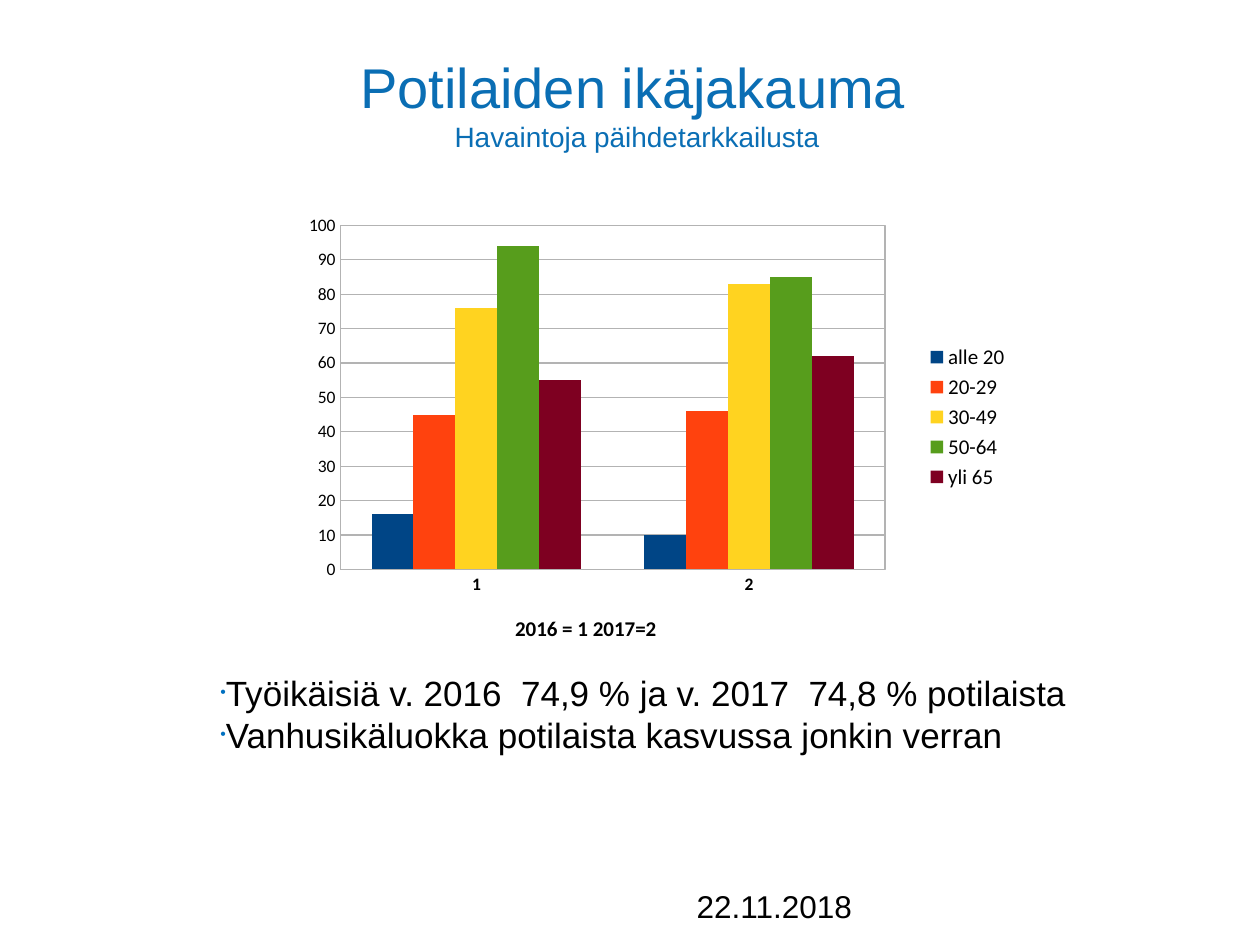
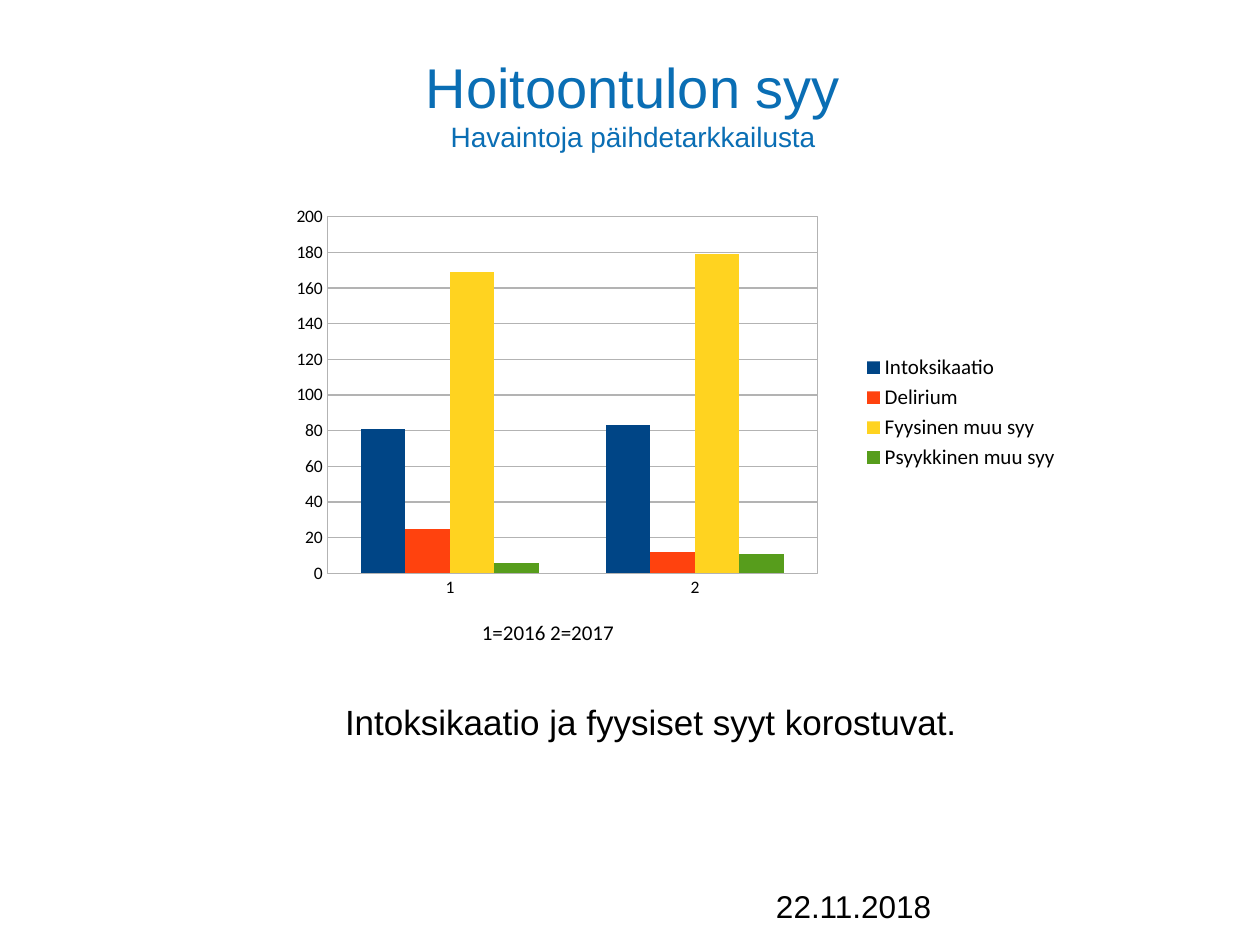
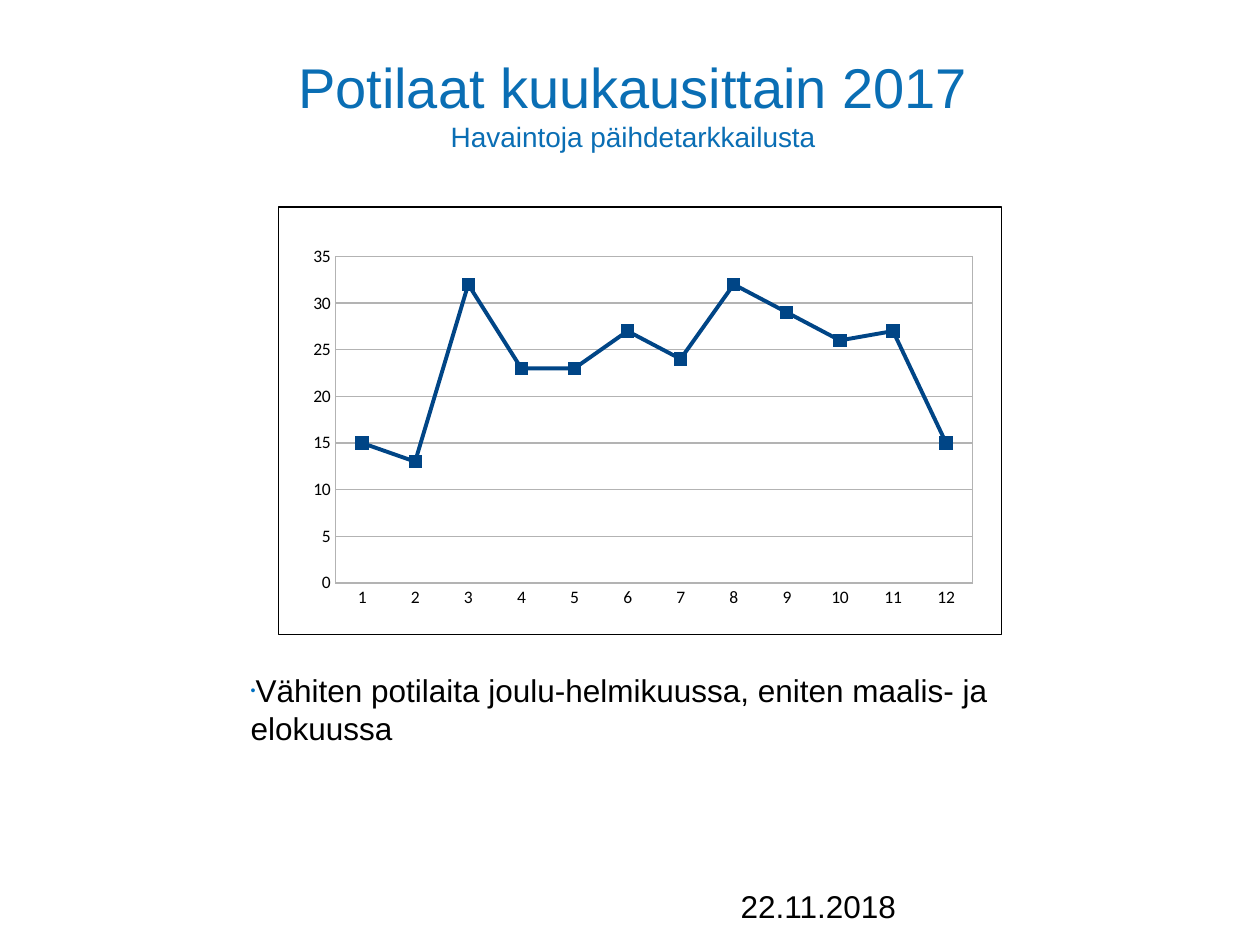
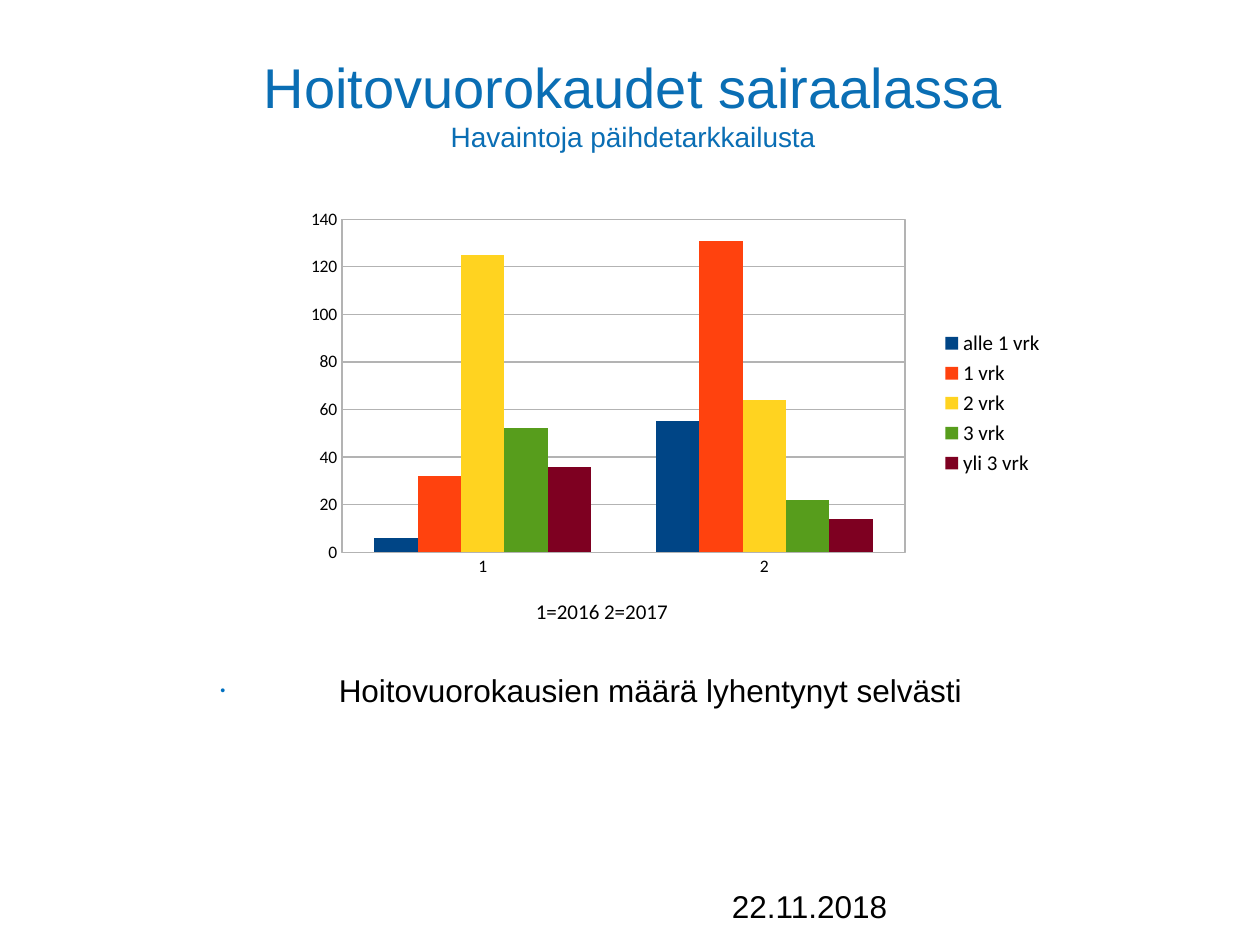
from dataclasses import dataclass

from pptx import Presentation
from pptx.chart.data import CategoryChartData
from pptx.dml.color import RGBColor
from pptx.enum.chart import XL_CHART_TYPE, XL_LEGEND_POSITION, XL_MARKER_STYLE, XL_TICK_MARK
from pptx.enum.text import MSO_ANCHOR, PP_ALIGN
from pptx.oxml import parse_xml
from pptx.oxml.ns import nsdecls, qn
from pptx.util import Inches, Pt


@dataclass(frozen=True)
class Theme:
    font: str = "Arial"
    chart_font: str = "Calibri"
    title: str = "0A6EB4"
    bullet: str = "0070C0"
    text: str = "000000"
    grid: str = "B3B3B3"
    series: tuple = ("004586", "FF420E", "FFD320", "579D1C", "7E0021")
    title_size: int = 32
    subtitle_size: int = 16
    date_size: int = 18
    axis_size: int = 10
    label_size: int = 12
    thin: float = 0.75
    thick: float = 2.25


theme = Theme()
prs = Presentation()
prs.slide_width, prs.slide_height = Inches(10), Inches(7.5)
col, row = prs.slide_width / 100, prs.slide_height / 100


def add_text(s, box, lines, indent=0, hang=0, bullet=False, align=PP_ALIGN.LEFT, framed=False):
    x, y, w, h = (int(n * unit) for n, unit in zip(box, (col, row, col, row)))
    if framed:
        fb = s.shapes.build_freeform(x, y)
        fb.add_line_segments([(x + w, y), (x + w, y + h), (x, y + h)], close=True)
        sp = fb.convert_to_shape()
        sp.shadow.inherit = False
        sp.fill.background()
        sp.line.fill.background()
    else:
        sp = s.shapes.add_textbox(x, y, w, h)
    tf = sp.text_frame
    tf.word_wrap = True
    tf.vertical_anchor = MSO_ANCHOR.TOP
    for i, runs in enumerate(lines):
        p = tf.paragraphs[0] if i == 0 else tf.add_paragraph()
        pPr = p._p.get_or_add_pPr()
        pPr.set("marL", str(int(indent * col)))
        pPr.set("indent", str(int(-hang * col)))
        if bullet:
            for xml in (f'<a:buClr {nsdecls("a")}><a:srgbClr val="{theme.bullet}"/></a:buClr>',
                        f'<a:buSzPct {nsdecls("a")} val="45000"/>',
                        f'<a:buFont {nsdecls("a")} typeface="{theme.font}"/>',
                        f'<a:buChar {nsdecls("a")} char="•"/>'):
                pPr.append(parse_xml(xml))
        p.alignment = align
        for j, (text, size, color) in enumerate(runs):
            if j:
                p.add_line_break()
            r = p.add_run()
            r.text = text
            r.font.name = theme.font
            r.font.size = Pt(size)
            r.font.color.rgb = RGBColor.from_string(color)


def outline(color):
    return parse_xml(
        f'<c:spPr {nsdecls("c", "a")}><a:noFill/><a:ln w="{Pt(theme.thin)}">'
        f'<a:solidFill><a:srgbClr val="{color}"/></a:solidFill></a:ln></c:spPr>')


subtitle = "Havaintoja päihdetarkkailusta"
slides = [
    dict(title="Potilaiden ikäjakauma", subtitle=" " + subtitle, date_indent=26.4,
         body=["Työikäisiä v. 2016  74,9 % ja v. 2017  74,8 % potilaista",
               "Vanhusikäluokka potilaista kasvussa jonkin verran"],
         box=(16.5, 70.4, 74.8, 13.73), size=20, bullet=True, hang=0,
         chart=(21.5, 17.87, 59.6, 52.53), plot=(0.051, 0.094, 0.767, 0.763),
         axis_title="2016 = 1 2017=2", title_at=(0.32, 0.89), bold=True,
         series={"alle 20": (16, 10), "20-29": (45, 46), "30-49": (76, 83),
                 "50-64": (94, 85), "yli 65": (55, 62)}),
    dict(title="Hoitoontulon syy", subtitle=subtitle, date_indent=32.7,
         body=["Intoksikaatio ja fyysiset syyt korostuvat."],
         box=(26.4, 73.47, 65, 5.6), size=20, bullet=False, hang=0,
         chart=(20.5, 16.93, 64.6, 53.47), plot=(0.047, 0.093, 0.64, 0.774),
         axis_title="1=2016 2=2017", title_at=(0.27, 0.9), bold=False,
         series={"Intoksikaatio": (81, 83), "Delirium": (25, 12),
                 "Fyysinen muu syy": (169, 179), "Psyykkinen muu syy": (6, 11)}),
    dict(title="Potilaat kuukausittain 2017", subtitle=subtitle, date_indent=29.9,
         body=["Vähiten potilaita joulu-helmikuussa, eniten maalis- ja elokuussa"],
         box=(18.9, 70.4, 63.8, 9.33), size=18, bullet=True, hang=0,
         chart=(22.05, 21.82, 57.5, 45.4), plot=(0.048, 0.093, 0.912, 0.844),
         axis_title=None, bold=False,
         series={"Series 1": (15, 13, 32, 23, 23, 27, 24, 32, 29, 26, 27, 15)}),
    dict(title="Hoitovuorokaudet sairaalassa", subtitle=subtitle, date_indent=29.2,
         body=["Hoitovuorokausien määrä lyhentynyt selvästi"],
         box=(16.5, 70.4, 74.8, 5.33), size=18, bullet=True, hang=9.4,
         chart=(21.7, 17.47, 62.2, 50.4), plot=(0.048, 0.093, 0.758, 0.772),
         axis_title="1=2016 2=2017", title_at=(0.33, 0.9), bold=False,
         series={"alle 1 vrk": (6, 55), "1 vrk": (32, 131), "2 vrk": (125, 64),
                 "3 vrk": (52, 22), "yli 3 vrk": (36, 14)}),
]

for d in slides:
    s = prs.slides.add_slide(prs.slide_layouts[6])
    add_text(s, (9.8, 4.88, 80.9, 9.47),
             [[(d["title"], theme.title_size, theme.title),
               (d["subtitle"], theme.subtitle_size, theme.title)]],
             align=PP_ALIGN.CENTER)
    add_text(s, (27.9, 93.2, 18.5 + d["date_indent"], 3.33),
             [[("22.11.2018", theme.date_size, theme.text)]], indent=d["date_indent"])
    add_text(s, d["box"], [[(t, d["size"], theme.text)] for t in d["body"]],
             indent=d["hang"], hang=d["hang"], bullet=d["bullet"], framed=True)

    is_line = len(d["series"]) == 1
    data = CategoryChartData()
    data.categories = [str(n + 1) for n in range(len(next(iter(d["series"].values()))))]
    for name, values in d["series"].items():
        data.add_series(name, values)
    x, y, w, h = d["chart"]
    kind = XL_CHART_TYPE.LINE_MARKERS if is_line else XL_CHART_TYPE.COLUMN_CLUSTERED
    chart = s.shapes.add_chart(kind, int(x * col), int(y * row),
                               int(w * col), int(h * row), data).chart
    chart.has_title = False
    chart.font.name = theme.chart_font
    chart.font.size = Pt(theme.axis_size)
    chart.font.color.rgb = RGBColor.from_string(theme.text)

    chart.has_legend = not is_line
    if chart.has_legend:
        chart.legend.position = XL_LEGEND_POSITION.RIGHT
        chart.legend.include_in_layout = False
        chart.legend.font.size = Pt(theme.label_size)

    for axis in (chart.category_axis, chart.value_axis):
        axis.major_tick_mark = axis.minor_tick_mark = XL_TICK_MARK.NONE
        axis.tick_labels.font.size = Pt(theme.axis_size)
        axis.format.line.color.rgb = RGBColor.from_string(theme.grid)
        axis.format.line.width = Pt(theme.thin)
    grid = chart.value_axis.major_gridlines.format.line
    grid.color.rgb = RGBColor.from_string(theme.grid)
    grid.width = Pt(theme.thin)
    chart.category_axis.tick_labels.font.bold = d["bold"]
    if d["axis_title"]:
        title = chart.category_axis.axis_title
        r = title.text_frame.paragraphs[0].add_run()
        r.text = d["axis_title"]
        r.font.name = theme.chart_font
        r.font.size = Pt(theme.label_size)
        r.font.bold = d["bold"]
        r.font.color.rgb = RGBColor.from_string(theme.text)
        for old in title._element.findall(qn("c:layout")):
            title._element.remove(old)
        left, top = d["title_at"]
        title._element.find(qn("c:tx")).addnext(parse_xml(
            f'<c:layout {nsdecls("c")}><c:manualLayout><c:xMode val="edge"/>'
            f'<c:yMode val="edge"/><c:x val="{left}"/><c:y val="{top}"/>'
            f'</c:manualLayout></c:layout>'))

    plot = chart.plots[0]
    plot.vary_by_categories = False
    if not is_line:
        plot.gap_width = 150
        plot.overlap = 0
    for series, color in zip(plot.series, theme.series):
        rgb = RGBColor.from_string(color)
        if is_line:
            series.smooth = False
            series.format.line.color.rgb = rgb
            series.format.line.width = Pt(theme.thick)
            series.marker.style = XL_MARKER_STYLE.SQUARE
            series.marker.size = 7
            series.marker.format.fill.solid()
            series.marker.format.fill.fore_color.rgb = rgb
            series.marker.format.line.color.rgb = rgb
        else:
            series.format.fill.solid()
            series.format.fill.fore_color.rgb = rgb

    chart_xml = chart._chartSpace.find(qn("c:chart"))
    area = chart_xml.find(qn("c:plotArea"))
    for old in area.findall(qn("c:layout")):
        area.remove(old)
    sides = "".join(f'<c:{k} val="{v}"/>' for k, v in zip("xywh", d["plot"]))
    area.insert(0, parse_xml(
        f'<c:layout {nsdecls("c")}><c:manualLayout><c:layoutTarget val="outer"/>'
        f'<c:xMode val="edge"/><c:yMode val="edge"/>{sides}</c:manualLayout></c:layout>'))
    area.append(outline(theme.grid))
    if is_line:
        chart_xml.addnext(outline(theme.text))

prs.save("out.pptx")
